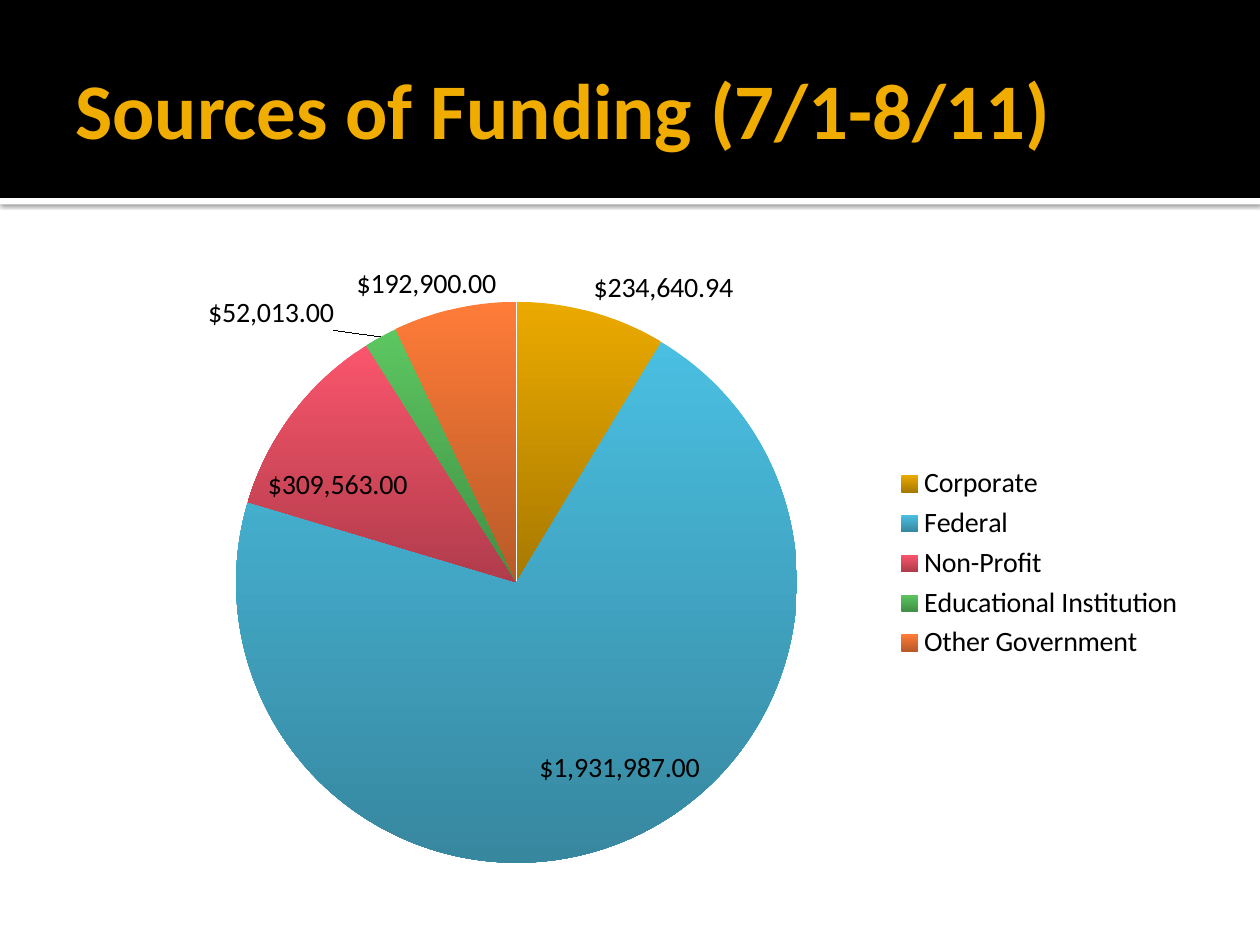
from pptx import Presentation
from pptx.chart.data import CategoryChartData as ChartData
from pptx.dml.color import RGBColor as RGB
from pptx.enum.chart import XL_CHART_TYPE as Kind, XL_LABEL_POSITION as Spot
from pptx.enum.chart import XL_LEGEND_POSITION as Side
from pptx.enum.shapes import MSO_SHAPE as Shape
from pptx.enum.text import MSO_ANCHOR as Anchor, PP_ALIGN as Align
from pptx.oxml import parse_xml
from pptx.oxml.ns import nsdecls
from pptx.util import Cm, Pt

# Content
TITLE = "Sources of Funding (7/1-8/11)"
FUNDS = [  # source, dollars, top and bottom colour of the slice
    ("Corporate", 234640.94, "EBAA00", "A87900"),
    ("Federal", 1931987, "4ABFE2", "37879F"),
    ("Non-Profit", 309563, "FA556C", "B03C4B"),
    ("Educational Institution", 52013, "5CC660", "419045"),
    ("Other Government", 192900, "FF7C38", "B85A28"),
]
MONEY = '"$"#,##0.00;\\("$"#,##0.00\\)'

THEME = {
    "font": "Calibri", "head": Pt(45), "label": Pt(16),
    "black": RGB(0, 0, 0), "white": RGB(255, 255, 255),
    "gold": RGB.from_string("F0AD00"),
}
BAND = Cm(3.99)  # height of the title band
PLOT = {"x": 0.15, "y": 0.09, "w": 0.5, "h": 0.88}  # shares of the chart

deck = Presentation()
deck.slide_width, deck.slide_height = Cm(25.4), Cm(19.05)
slide = deck.slides.add_slide(deck.slide_layouts[5])
wide = deck.slide_width


def add_bar(top, high, tint):
    bar = slide.shapes.add_shape(Shape.RECTANGLE, 0, top, wide, high)
    bar.shadow.inherit = False
    bar.fill.solid()
    bar.fill.fore_color.rgb = tint
    bar.line.fill.background()
    return bar


# Title band, with a white strip that casts a shadow
strip = add_bar(BAND, Cm(0.13), THEME["white"])
strip.shadow.inherit = True
strip._element.spPr.append(parse_xml(
    f'<a:effectLst {nsdecls("a")}>'
    '<a:outerShdw blurRad="31750" dist="10160" dir="5400000" algn="tl" rotWithShape="0">'
    '<a:srgbClr val="000000"><a:alpha val="60000"/></a:srgbClr>'
    '</a:outerShdw></a:effectLst>'))
add_bar(0, BAND, THEME["black"])

# Title, brought in front of the band
title = slide.shapes.title
slide.shapes._spTree.append(title._element)
title.left, title.top, title.width, title.height = Cm(1.27), Cm(0.43), Cm(22.86), Cm(3.48)
frame = title.text_frame
frame.text = TITLE
frame.vertical_anchor = Anchor.MIDDLE
frame.margin_left = Cm(0.25)
frame.margin_right = frame.margin_top = frame.margin_bottom = Cm(0.13)
para = frame.paragraphs[0]
para.alignment = Align.LEFT
para.font.name, para.font.size, para.font.bold = THEME["font"], THEME["head"], True
para.font.color.rgb = THEME["gold"]

# Pie chart
data = ChartData(number_format=MONEY)
data.categories = [fund[0] for fund in FUNDS]
data.add_series("Series 1", [fund[1] for fund in FUNDS])
chart = slide.shapes.add_chart(
    Kind.PIE, Cm(1.27), Cm(4.93), Cm(22.86), Cm(12.85), data).chart
chart.has_title = False
chart.font.name, chart.font.size = THEME["font"], THEME["label"]
chart.font.color.rgb = THEME["black"]
chart.has_legend = True
chart.legend.position = Side.RIGHT
chart.legend.include_in_layout = False

plot = chart.plots[0]
plot.vary_by_categories = True
for spot, (_, _, *tints) in enumerate(FUNDS):
    fill = plot.series[0].points[spot].format.fill
    fill.gradient()
    fill.gradient_angle = 270
    for stop, tint in zip(fill.gradient_stops, tints):
        stop.color.rgb = RGB.from_string(tint)

# Value labels
plot.has_data_labels = True
labels = plot.data_labels
labels.show_value, labels.show_percentage = True, False
labels.number_format, labels.number_format_is_linked = MONEY, False
labels.position = Spot.BEST_FIT
labels.font.name, labels.font.size = THEME["font"], THEME["label"]
labels.font.color.rgb = THEME["black"]

# Place of the pie inside the chart
area = chart._chartSpace.chart.plotArea
for old in area.xpath("c:layout"):
    area.remove(old)
sizes = "".join(f'<c:{key} val="{val}"/>' for key, val in PLOT.items())
area.insert(0, parse_xml(
    f'<c:layout {nsdecls("c")}><c:manualLayout><c:layoutTarget val="inner"/>'
    f'<c:xMode val="edge"/><c:yMode val="edge"/>{sizes}</c:manualLayout></c:layout>'))

deck.save("out.pptx")
